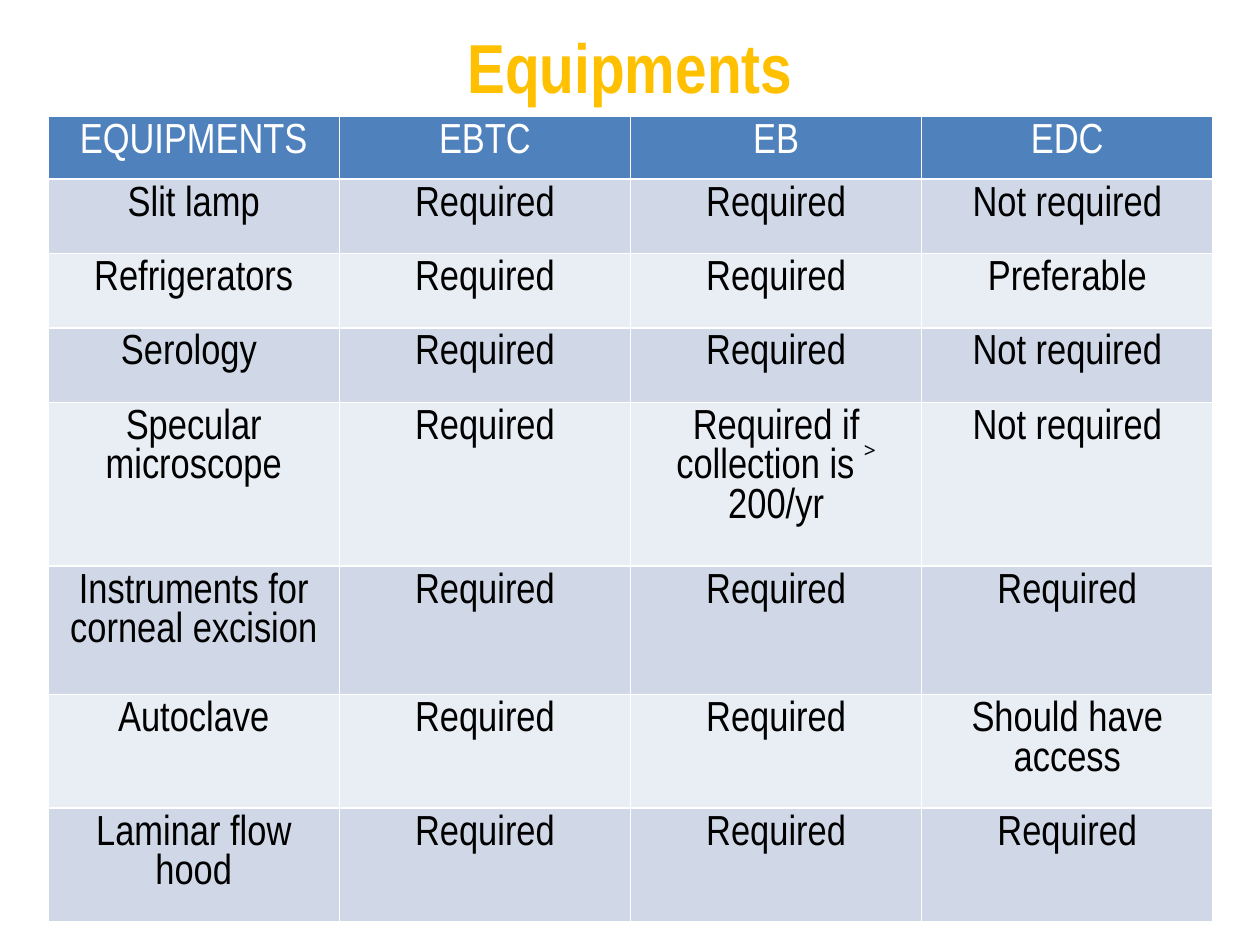
from lxml.etree import SubElement
from pptx import Presentation
from pptx.dml.color import RGBColor
from pptx.enum.text import MSO_ANCHOR as Anchor, PP_ALIGN as Align
from pptx.oxml.ns import qn
from pptx.util import Cm, Pt

COLORS = {
    "title": "FFC000",
    "header": "4F81BD",
    "odd": "D0D8E8",
    "even": "E9EDF4",
    "rule": "FFFFFF",
    "header_text": "FFFFFF",
    "body_text": "000000",
}
COLUMN_WIDTH = 5.87
ROW_HEIGHTS = [1.21, 1.5, 1.5, 1.5, 2.84, 2.59, 1.5, 1.5]
EQUIPMENT = [
    ("EQUIPMENTS", "EBTC", "EB", "EDC"),
    ("Slit lamp", "Required", "Required", "Not required"),
    ("Refrigerators", "Required", "Required", "Preferable"),
    ("Serology ", "Required", "Required", "Not required"),
    ("Specular microscope", "Required", "Required if collection is ˃ 200/yr", "Not required"),
    ("Instruments for corneal excision", "Required", "Required", "Required"),
    ("Autoclave", "Required", "Required", "Should have access"),
    ("Laminar flow hood", "Required", "Required", "Required"),
]


def write_centered(frame, wording, color, size, bold=False):
    paragraph = frame.paragraphs[0]
    paragraph.alignment = Align.CENTER
    run = paragraph.add_run()
    run.text = wording
    for name, value in {"name": "Arial Narrow", "size": Pt(size), "bold": bold}.items():
        setattr(run.font, name, value)
    run.font.color.rgb = RGBColor.from_string(COLORS[color])


def add_title(slide, wording):
    title = slide.shapes.add_textbox(Cm(1.27), Cm(0.76), Cm(22.86), Cm(1.14))
    frame = title.text_frame
    for name, value in {"word_wrap": True, "vertical_anchor": Anchor.MIDDLE}.items():
        setattr(frame, name, value)
    write_centered(frame, wording, "title", 39.6, bold=True)


def rule_cell(cell):
    properties = cell._tc.get_or_add_tcPr()
    for position, side in enumerate(("lnL", "lnR", "lnT", "lnB")):
        line = SubElement(properties, qn(f"a:{side}"), w=str(Pt(1)))
        fill = SubElement(line, qn("a:solidFill"))
        SubElement(fill, qn("a:srgbClr"), val=COLORS["rule"])
        properties.insert(position, line)


def fill_cell(cell, wording, row_index):
    band = "header" if row_index == 0 else ("even", "odd")[row_index % 2]
    cell.fill.solid()
    cell.fill.fore_color.rgb = RGBColor.from_string(COLORS[band])
    rule_cell(cell)
    write_centered(cell.text_frame, wording, "body_text" if row_index else "header_text", 24)


def add_requirements(slide):
    column_count = len(EQUIPMENT[0])
    requirements = slide.shapes.add_table(
        len(EQUIPMENT), column_count, Cm(0.97), Cm(2.34),
        Cm(COLUMN_WIDTH * column_count), Cm(sum(ROW_HEIGHTS)),
    ).table
    for column in requirements.columns:
        column.width = Cm(COLUMN_WIDTH)
    for row_index, (height, entries) in enumerate(zip(ROW_HEIGHTS, EQUIPMENT)):
        requirements.rows[row_index].height = Cm(height)
        for column_index, wording in enumerate(entries):
            fill_cell(requirements.cell(row_index, column_index), wording, row_index)


def main():
    """Build the slide of equipment required at each type of eye centre."""
    deck = Presentation()
    deck.slide_width, deck.slide_height = Cm(25.4), Cm(19.05)
    slide = deck.slides.add_slide(deck.slide_layouts[6])
    add_title(slide, "Equipments")
    add_requirements(slide)
    deck.save("out.pptx")


if __name__ == "__main__":
    main()
